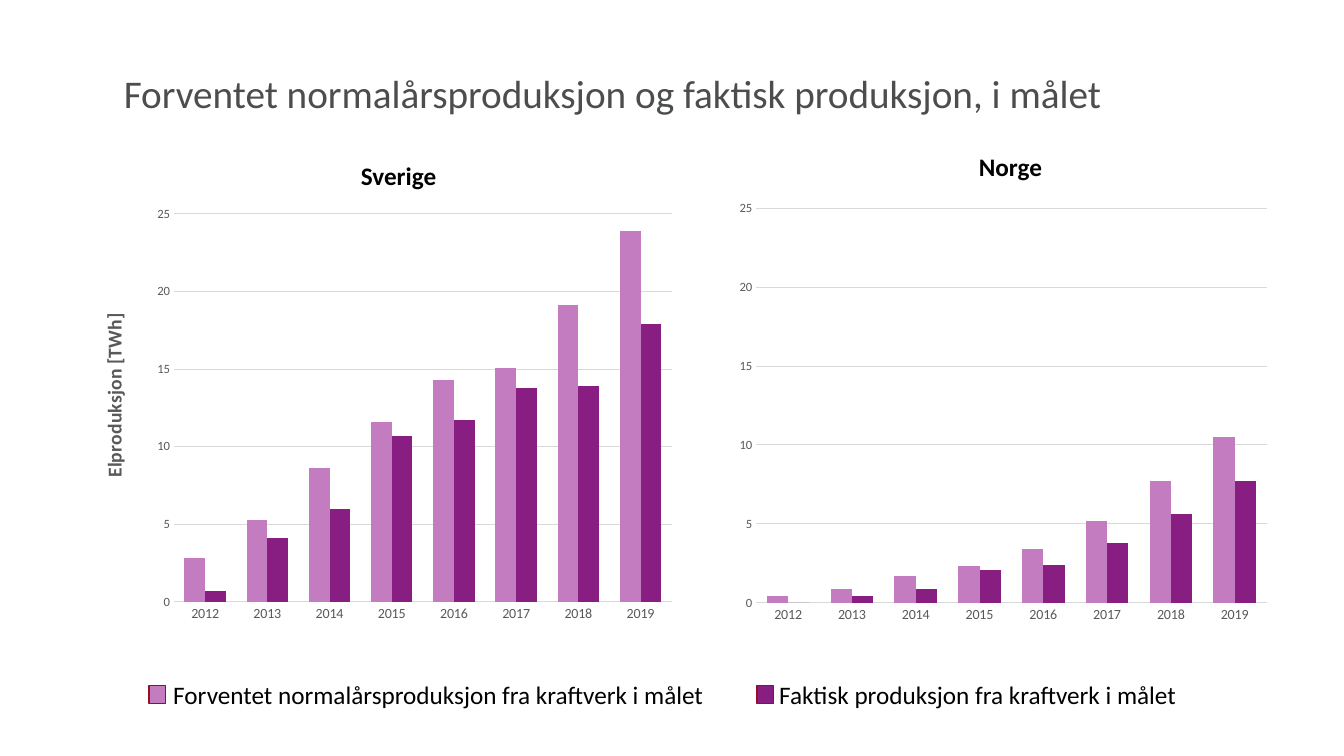
from lxml import etree
from pptx import Presentation
from pptx.chart.data import CategoryChartData
from pptx.dml.color import RGBColor
from pptx.enum.chart import XL_CHART_TYPE as ChartType, XL_TICK_MARK as TickMark
from pptx.enum.shapes import MSO_SHAPE as ShapeType
from pptx.enum.text import MSO_AUTO_SIZE as AutoSize
from pptx.oxml.ns import qn
from pptx.util import Inches, Pt

BLACK = RGBColor(0x00, 0x00, 0x00)
TITLE_GREY = RGBColor(0x4C, 0x4D, 0x4F)
AXIS_GREY = RGBColor(0x59, 0x59, 0x59)
GRID_GREY = RGBColor(0xD9, 0xD9, 0xD9)
LIGHT_PURPLE = RGBColor(0xC4, 0x7C, 0xC1)
DARK_PURPLE = RGBColor(0x89, 0x1E, 0x82)
SWATCH_RED = RGBColor(0x98, 0x0D, 0x25)
FONT = "Calibri"

EXPECTED = "Forventet normalårsproduksjon fra kraftverk i målet"
ACTUAL = "Faktisk produksjon fra kraftverk i målet"
YEARS = [str(year) for year in range(2012, 2020)]

presentation = Presentation()
presentation.slide_width = Inches(13.33)
presentation.slide_height = Inches(7.5)
slide = presentation.slides.add_slide(presentation.slide_layouts[6])


def add_text(text, left, top, width, height=0.4, size=18, bold=False, color=BLACK, wrap=False):
    box = slide.shapes.add_textbox(Inches(left), Inches(top), Inches(width), Inches(height))
    frame = box.text_frame
    frame.word_wrap = wrap
    frame.auto_size = AutoSize.NONE if wrap else AutoSize.SHAPE_TO_FIT_TEXT
    run = frame.paragraphs[0].add_run()
    run.text = text
    run.font.name = FONT
    run.font.size = Pt(size)
    run.font.bold = bold
    run.font.color.rgb = color


def place(element, index, **settings):
    for old_layout in element.findall(qn("c:layout")):
        element.remove(old_layout)
    layout = etree.Element(qn("c:layout"))
    manual = etree.SubElement(layout, qn("c:manualLayout"))
    for name, value in settings.items():
        etree.SubElement(manual, qn(f"c:{name}")).set("val", str(value))
    element.insert(index, layout)


charts = [
    (0.78, (0.158, 0.042, 0.824, 0.887), "Elproduksjon [TWh]",
     [2.8, 5.3, 8.6, 11.6, 14.3, 15.1, 19.1, 23.9],
     [0.7, 4.1, 6, 10.7, 11.7, 13.8, 13.9, 17.9]),
    (6.77, (0.122, 0.029, 0.845, 0.902), None,
     [0.4, 0.9, 1.7, 2.3, 3.4, 5.2, 7.7, 10.5],
     [0, 0.4, 0.9, 2.1, 2.4, 3.8, 5.6, 7.7]),
]

for left, (x, y, width, height), axis_title, expected, actual in charts:
    data = CategoryChartData(number_format="0.0")
    data.categories = YEARS
    data.add_series(EXPECTED, expected)
    data.add_series(ACTUAL, actual)
    chart = slide.shapes.add_chart(
        ChartType.COLUMN_CLUSTERED, Inches(left), Inches(1.94), Inches(5.99), Inches(4.34), data
    ).chart
    chart.has_title = False
    chart.has_legend = False
    chart.font.name = FONT
    chart.font.size = Pt(10)
    chart.font.color.rgb = BLACK

    plot = chart.plots[0]
    plot.gap_width = 100
    plot.overlap = 0
    plot.vary_by_categories = False
    for series, color in zip(plot.series, (LIGHT_PURPLE, DARK_PURPLE)):
        series.format.fill.solid()
        series.format.fill.fore_color.rgb = color

    for axis, size in ((chart.category_axis, 10), (chart.value_axis, 9)):
        axis.major_tick_mark = TickMark.NONE
        axis.minor_tick_mark = TickMark.NONE
        axis.tick_labels.font.name = FONT
        axis.tick_labels.font.size = Pt(size)
        axis.tick_labels.font.color.rgb = AXIS_GREY

    value_axis = chart.value_axis
    value_axis.minimum_scale = 0
    value_axis.maximum_scale = 25
    value_axis.major_unit = 5
    value_axis.tick_labels.number_format = "0"
    value_axis.tick_labels.number_format_is_linked = False
    value_axis.format.line.fill.background()
    for line in (chart.category_axis.format.line, value_axis.major_gridlines.format.line):
        line.color.rgb = GRID_GREY
        line.width = Pt(0.75)

    if axis_title:
        title = value_axis.axis_title
        frame = title.text_frame
        frame.text = axis_title
        font = frame.paragraphs[0].runs[0].font
        font.name = FONT
        font.size = Pt(14)
        font.bold = True
        font.color.rgb = AXIS_GREY
        body = title._element.find(".//" + qn("a:bodyPr"))
        body.set("rot", "-5400000")
        body.set("vert", "horz")
        place(title._element, 1, xMode="edge", yMode="edge", x=0.03, y=0.26)

    plot_area = chart._chartSpace.find(".//" + qn("c:plotArea"))
    place(plot_area, 0, layoutTarget="inner", xMode="edge", yMode="edge",
          x=x, y=y, w=width, h=height)

add_text("Forventet normalårsproduksjon og faktisk produksjon, i målet",
         1.13, 0.64, 11.27, height=0.9, size=28, color=TITLE_GREY, wrap=True)
add_text("Sverige", 3.48, 1.54, 1.07, bold=True)
add_text("Norge", 9.61, 1.45, 0.95, bold=True)

legend = [
    (EXPECTED, LIGHT_PURPLE, 1.48, 1.62, 5.54),
    (ACTUAL, DARK_PURPLE, 7.51, 7.63, 4.22),
]
for label, color, swatch_left, label_left, label_width in legend:
    swatch = slide.shapes.add_shape(
        ShapeType.RECTANGLE, Inches(swatch_left), Inches(6.8), Inches(0.16), Inches(0.18))
    swatch.shadow.inherit = False
    swatch.fill.solid()
    swatch.fill.fore_color.rgb = color
    swatch.line.color.rgb = SWATCH_RED
    swatch.line.width = Pt(1)
    add_text(label, label_left, 6.69, label_width)

presentation.save("out.pptx")
